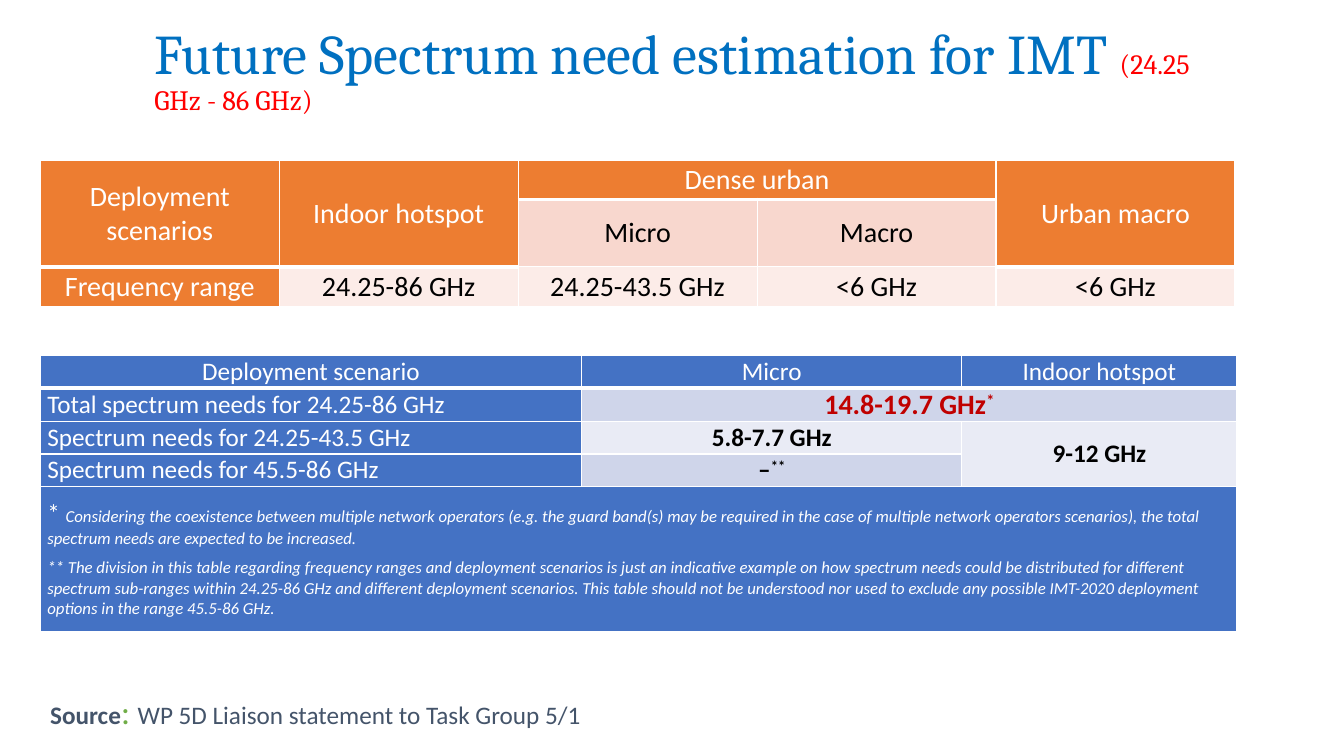
from pptx import Presentation
from pptx.dml.color import RGBColor
from pptx.enum import text as t
from pptx.oxml import parse_xml
from pptx.oxml.ns import nsdecls
from pptx.util import Inches, Pt

WHITE, BLACK, RED = "FFFFFF", "000000", "C00000"
ORANGE, PEACH, BLUSH = "ED7D31", "F8D7CE", "FCECE8"
BLUE, MIST, PALE = "4472C4", "CFD5EA", "E9EBF5"
SLATE, GREEN = "44546A", "70AD47"
LEFT, MID = t.PP_ALIGN.LEFT, t.PP_ALIGN.CENTER


def paint(color, code):
    color.rgb = RGBColor.from_string(code)


def style(font, size=None, color=None, bold=None, italic=None, name=None):
    if size:
        font.size = Pt(size)
    if color:
        paint(font.color, color)
    if bold is not None:
        font.bold = bold
    if italic is not None:
        font.italic = italic
    if name:
        font.name = name


class Deck:
    """Holds the body font and the current slide."""

    def __init__(self, font):
        self.font = font
        self.prs = Presentation()
        self.prs.slide_width, self.prs.slide_height = Inches(13.33), Inches(7.5)
        self.slide = self.prs.slides.add_slide(self.prs.slide_layouts[5])

    def fill_par(self, par, runs, align=LEFT, before=0, after=0, line=None, **look):
        """Fill a paragraph; runs is a string or a list of (words, changes)."""
        par.alignment = align
        par.space_before, par.space_after = Pt(before), Pt(after)
        if line:
            par.line_spacing = line
        style(par.font, **{"name": self.font, **look})
        for words, change in [(runs, {})] if isinstance(runs, str) else runs:
            run = par.add_run()
            run.text = words
            change = dict(change)
            if change.pop("sup", False):
                run.font._element.set("baseline", "30000")
            style(run.font, **change)

    def title(self, box, runs, **look):
        shape = self.slide.shapes.title
        shape.left, shape.top, shape.width, shape.height = map(Inches, box)
        frame = shape.text_frame
        frame.auto_size = t.MSO_AUTO_SIZE.NONE
        frame.vertical_anchor = t.MSO_ANCHOR.MIDDLE
        self.fill_par(frame.paragraphs[0], runs, **look)

    def label(self, box, runs, **look):
        frame = self.slide.shapes.add_textbox(*map(Inches, box)).text_frame
        frame.word_wrap = True
        self.fill_par(frame.paragraphs[0], runs, **look)

    def edge(self, cell, heavy):
        """Draw white cell borders, with a thicker one below if heavy."""
        props = cell._tc.get_or_add_tcPr()
        for side in "LRTB":
            width = Pt(3 if heavy and side == "B" else 1)
            props.append(parse_xml(
                f'<a:ln{side} {nsdecls("a")} w="{width}"><a:solidFill>'
                f'<a:srgbClr val="{WHITE}"/></a:solidFill></a:ln{side}>'))

    def table(self, left, top, cols, rows, base, cells):
        """Cells are (row, col, row span, col span, fill, paragraphs)."""
        grid = self.slide.shapes.add_table(
            len(rows), len(cols), Inches(left), Inches(top),
            Inches(sum(cols)), Inches(sum(rows))).table
        grid.first_row = grid.horz_banding = False
        for col, width in zip(grid.columns, cols):
            col.width = Inches(width)
        for row, height in zip(grid.rows, rows):
            row.height = Inches(height)
        for r, c, down, across, fill, pars in cells:
            for y in range(r, r + down):
                for x in range(c, c + across):
                    part = grid.cell(y, x)
                    self.edge(part, r == 0)
                    part.fill.solid()
                    paint(part.fill.fore_color, fill)
            cell = grid.cell(r, c)
            if down * across > 1:
                cell.merge(grid.cell(r + down - 1, c + across - 1))
            cell.vertical_anchor = t.MSO_ANCHOR.MIDDLE
            cell.margin_left = cell.margin_right = Inches(0.07)
            cell.margin_top = cell.margin_bottom = 0
            frame = cell.text_frame
            for i, (runs, look) in enumerate(pars):
                par = frame.add_paragraph() if i else frame.paragraphs[0]
                self.fill_par(par, runs, **{**base, **look})


def main():
    deck = Deck("Calibri")
    deck.label((0.4, 6.85, 12.93, 0.42), [
        ("Source", {"bold": True}),
        (": ", {"size": 24, "color": GREEN}),
        ("WP 5D Liaison statement to Task Group 5/1", {}),
    ], before=10, line=0.9, size=18, color=SLATE)
    deck.title((1.43, 0.13, 10.52, 1.16), [
        ("Future Spectrum need estimation for IMT ", {"size": 40, "color": "0070C0"}),
        ("(24.25 GHz - 86 GHz)", {"size": 20, "color": "FF0000"}),
    ], line=0.9, name="Cambria")

    head = {"align": MID, "before": 4, "after": 4, "color": WHITE}
    side = {**head, "align": LEFT}
    plain = {"align": MID, "before": 2, "after": 2, "color": BLACK}
    strong = {**plain, "bold": True}
    ranges = ["24.25-86 GHz", "24.25-43.5 GHz", "<6 GHz", "<6 GHz"]
    deck.table(0.4, 1.59, [2.37] * 5, [0.39] * 3, {"size": 20, "bold": False}, [
        (0, 0, 2, 1, ORANGE, [("Deployment scenarios", head)]),
        (0, 1, 2, 1, ORANGE, [("Indoor hotspot", head)]),
        (0, 2, 1, 2, ORANGE, [("Dense urban", head)]),
        (0, 4, 2, 1, ORANGE, [("Urban macro", head)]),
        (1, 2, 1, 1, PEACH, [("Micro", {**head, "color": BLACK})]),
        (1, 3, 1, 1, PEACH, [("Macro", {**head, "color": BLACK})]),
        (2, 0, 1, 1, ORANGE, [("Frequency range", {**plain, "color": WHITE})]),
        *[(2, c, 1, 1, BLUSH, [(words, plain)]) for c, words in enumerate(ranges, 1)],
    ])

    heads = ["Deployment scenario", "Micro", "Indoor hotspot"]
    needs = ["Total spectrum needs for 24.25-86 GHz",
             "Spectrum needs for 24.25-43.5 GHz",
             "Spectrum needs for 45.5-86 GHz"]
    note = {"before": 6, "color": WHITE}
    small = {"size": 12, "italic": True}
    deck.table(0.4, 3.53, [5.37, 3.77, 2.73], [0.32] * 4 + [1.44],
               {"size": 18, "bold": False}, [
        *[(0, c, 1, 1, BLUE, [(words, head)]) for c, words in enumerate(heads)],
        *[(r, 0, 1, 1, BLUE, [(words, side)]) for r, words in enumerate(needs, 1)],
        (1, 1, 1, 2, MIST, [([("14.8-19.7 GHz", {}), ("*", {"sup": True})],
                             {**strong, "size": 20, "color": RED})]),
        (2, 1, 1, 1, PALE, [("5.8-7.7 GHz", strong)]),
        (2, 2, 2, 1, PALE, [("9-12 GHz", strong)]),
        (3, 1, 1, 1, MIST, [([("–", {}), ("**", {"sup": True})], strong)]),
        (4, 0, 1, 3, BLUE, [
            ([("* ", {}),
              ("Considering the coexistence between multiple network operators "
               "(e.g. the guard band(s) may be required in the case of multiple "
               "network operators scenarios), the total spectrum needs are "
               "expected to be increased.", small)], note),
            ("** The division in this table regarding frequency ranges and "
             "deployment scenarios is just an indicative example on how spectrum "
             "needs could be distributed for different spectrum sub-ranges within "
             "24.25-86 GHz and different deployment scenarios. This table should "
             "not be understood nor used to exclude any possible IMT-2020 "
             "deployment options in the range 45.5-86 GHz.", {**note, **small}),
        ]),
    ])
    deck.prs.save("out.pptx")


if __name__ == "__main__":
    main()
